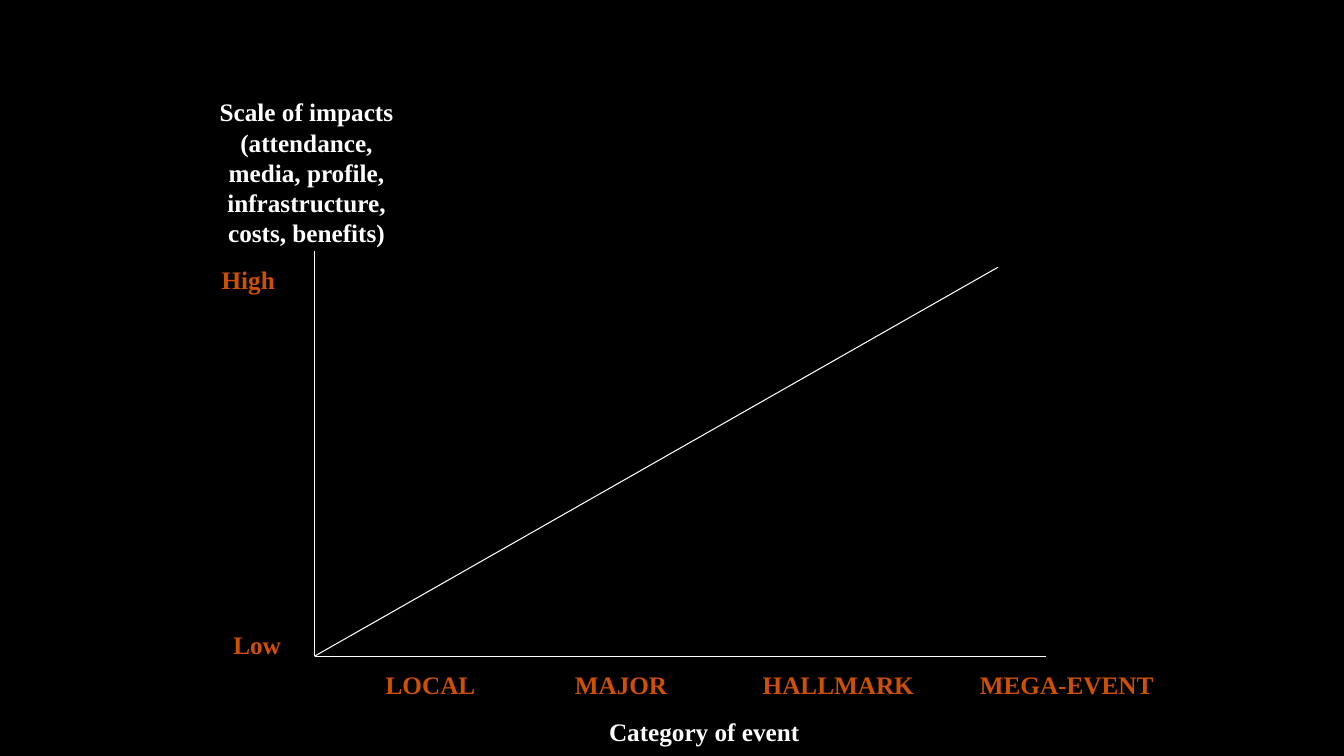
from lxml.etree import SubElement
from pptx import Presentation
from pptx.dml.color import RGBColor
from pptx.enum.shapes import MSO_CONNECTOR
from pptx.enum.text import MSO_AUTO_SIZE, PP_ALIGN
from pptx.oxml.ns import qn
from pptx.util import Inches, Pt

COLORS = {"background": "000000", "line": "FFFFFF", "title": "FFFFFF", "label": "D05002"}
LABEL_H = 0.4


def add_line(s, start, end):
    """Draw a thin straight line between two points in inches."""
    line = s.shapes.add_connector(
        MSO_CONNECTOR.STRAIGHT, *(Inches(v) for v in (*start, *end)))
    line.line.color.rgb = RGBColor.from_string(COLORS["line"])
    line.line.width = Pt(0.75)
    SubElement(line._element.spPr, qn("a:effectLst"))


def add_label(s, text, x, y, w, h=LABEL_H, color="label", align=PP_ALIGN.CENTER):
    """Write a bold label in a wrapping text box."""
    sp = s.shapes.add_textbox(Inches(x), Inches(y), Inches(w), Inches(h))
    tf = sp.text_frame
    tf.word_wrap = True
    tf.auto_size = MSO_AUTO_SIZE.SHAPE_TO_FIT_TEXT
    tf.text = text
    p = tf.paragraphs[0]
    p.alignment = align
    font = p.runs[0].font
    font.name = "Times New Roman"
    font.size = Pt(18)
    font.bold = True
    font.color.rgb = RGBColor.from_string(COLORS[color])


def add_axes(s, x, y, w, h):
    """Draw both axes and the rising trend in the plot box."""
    origin = (x, y + h)
    for start, end in (
        ((x, y), origin),
        (origin, (x + w, y + h)),
        (origin, (x + 0.935 * w, y + 0.04 * h)),
    ):
        add_line(s, start, end)


def add_scale_labels(s, x, y, h):
    """Label the vertical axis to the left of the plot box."""
    add_label(s, "Scale of impacts (attendance, media, profile, infrastructure, costs, benefits)",
              x - 1.18, y - 1.58, 2.2, 4 * LABEL_H, "title")
    add_label(s, "High", x - 1.02, y + 0.08, 0.94, align=PP_ALIGN.LEFT)
    add_label(s, "Low", x - 1.18, y + h - 0.32, 1.22)


def add_category_labels(s, x, y):
    """Label the horizontal axis below the plot box."""
    for text, offset, width in (
        ("LOCAL", 0.48, 1.34),
        ("MAJOR", 2.37, 1.34),
        ("HALLMARK", 4.33, 1.73),
        ("MEGA-EVENT", 6.38, 2.16),
    ):
        add_label(s, text, x + offset, y + 0.08, width)
    add_label(s, "Category of event", x - 0.15, y + 0.55, 8.03, color="title")


def add_impact_slide(prs):
    """Build the slide relating event category to scale of impacts."""
    s = prs.slides.add_slide(prs.slide_layouts[6])
    fill = s.background.fill
    fill.solid()
    fill.fore_color.rgb = RGBColor.from_string(COLORS["background"])
    x, y, w, h = 3.12, 2.49, 7.25, 4.02
    add_axes(s, x, y, w, h)
    add_scale_labels(s, x, y, h)
    add_category_labels(s, x, y + h)


def main():
    """Create and save the presentation."""
    prs = Presentation()
    prs.slide_width, prs.slide_height = Inches(13.33), Inches(7.5)
    add_impact_slide(prs)
    prs.save("out.pptx")


if __name__ == "__main__":
    main()
